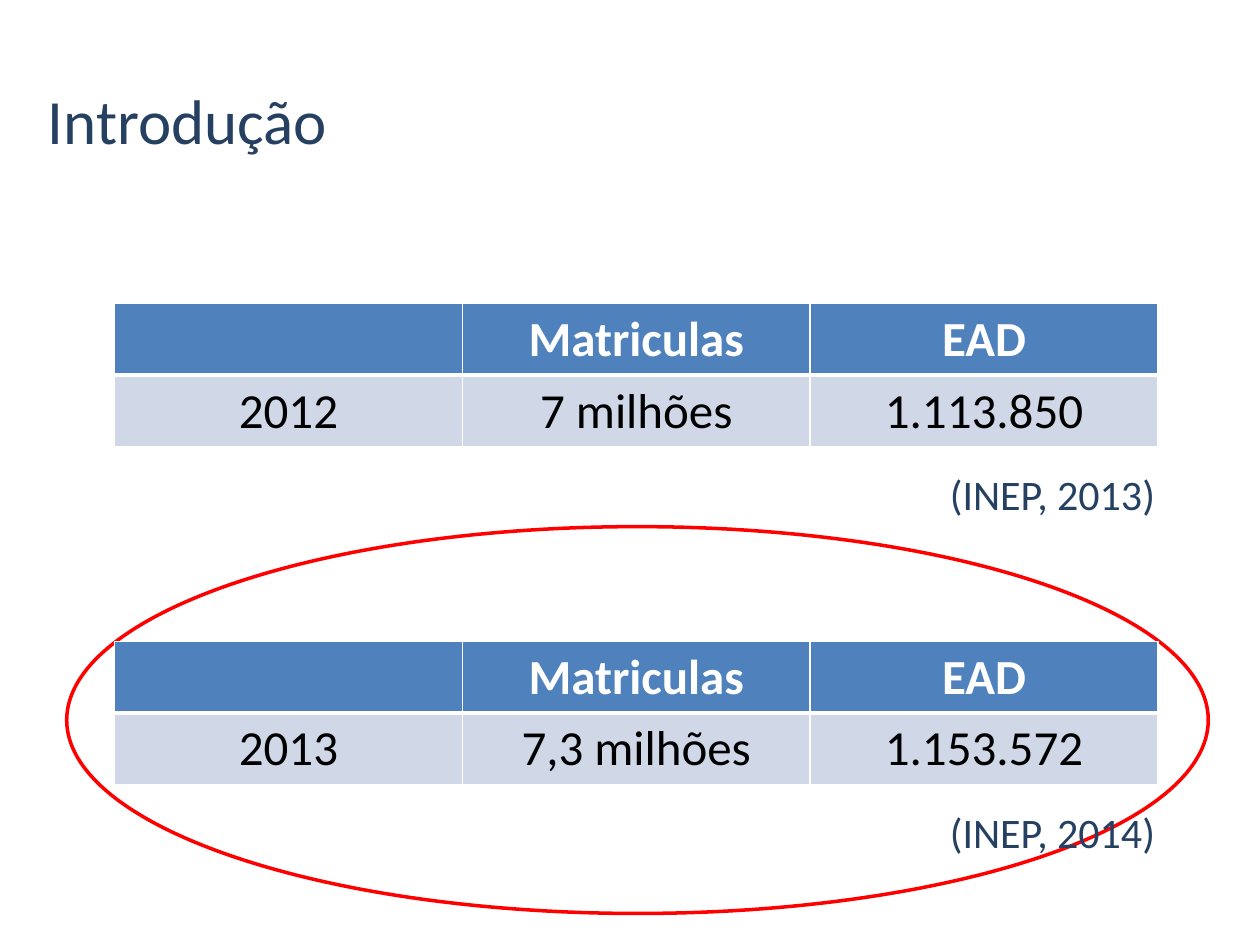
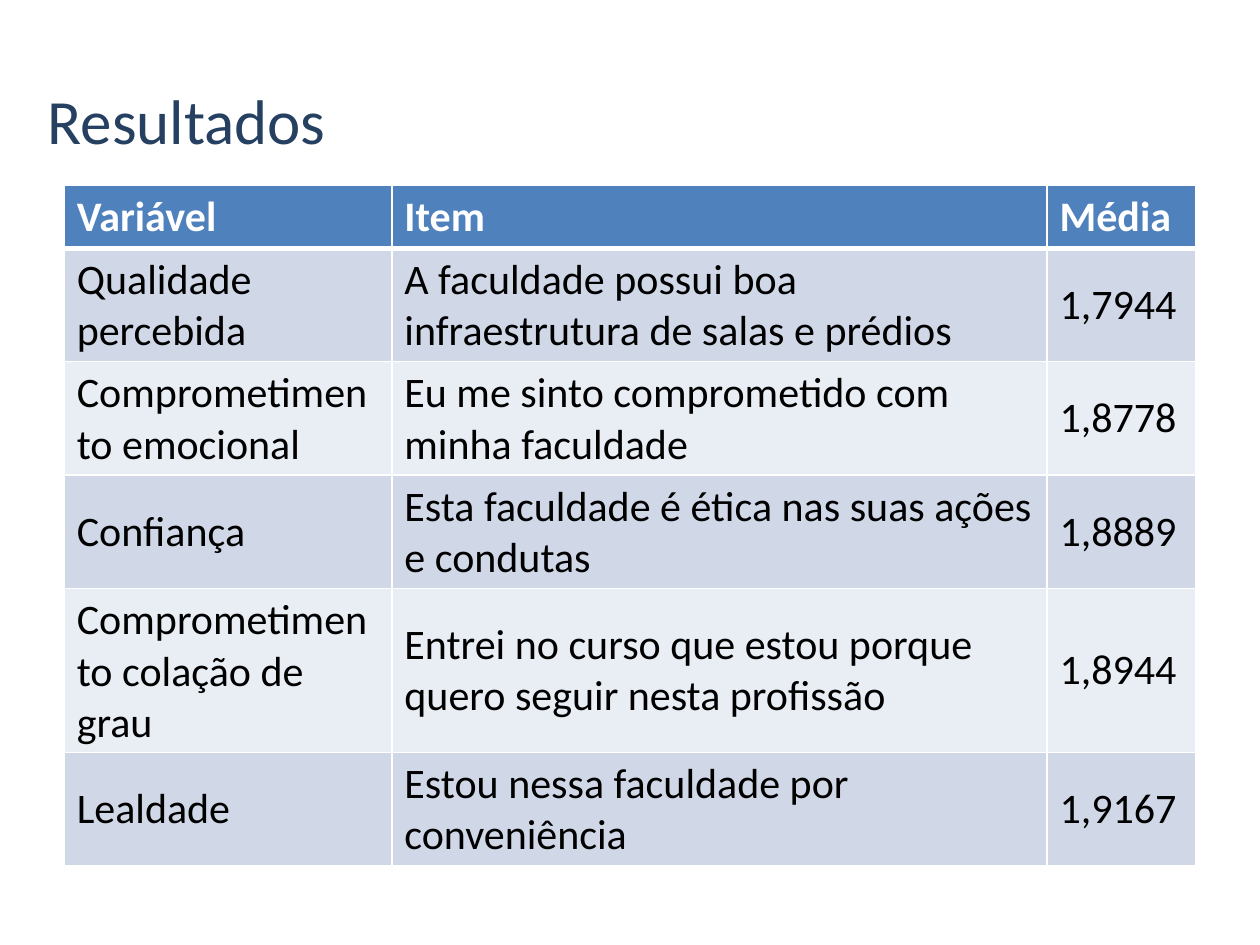
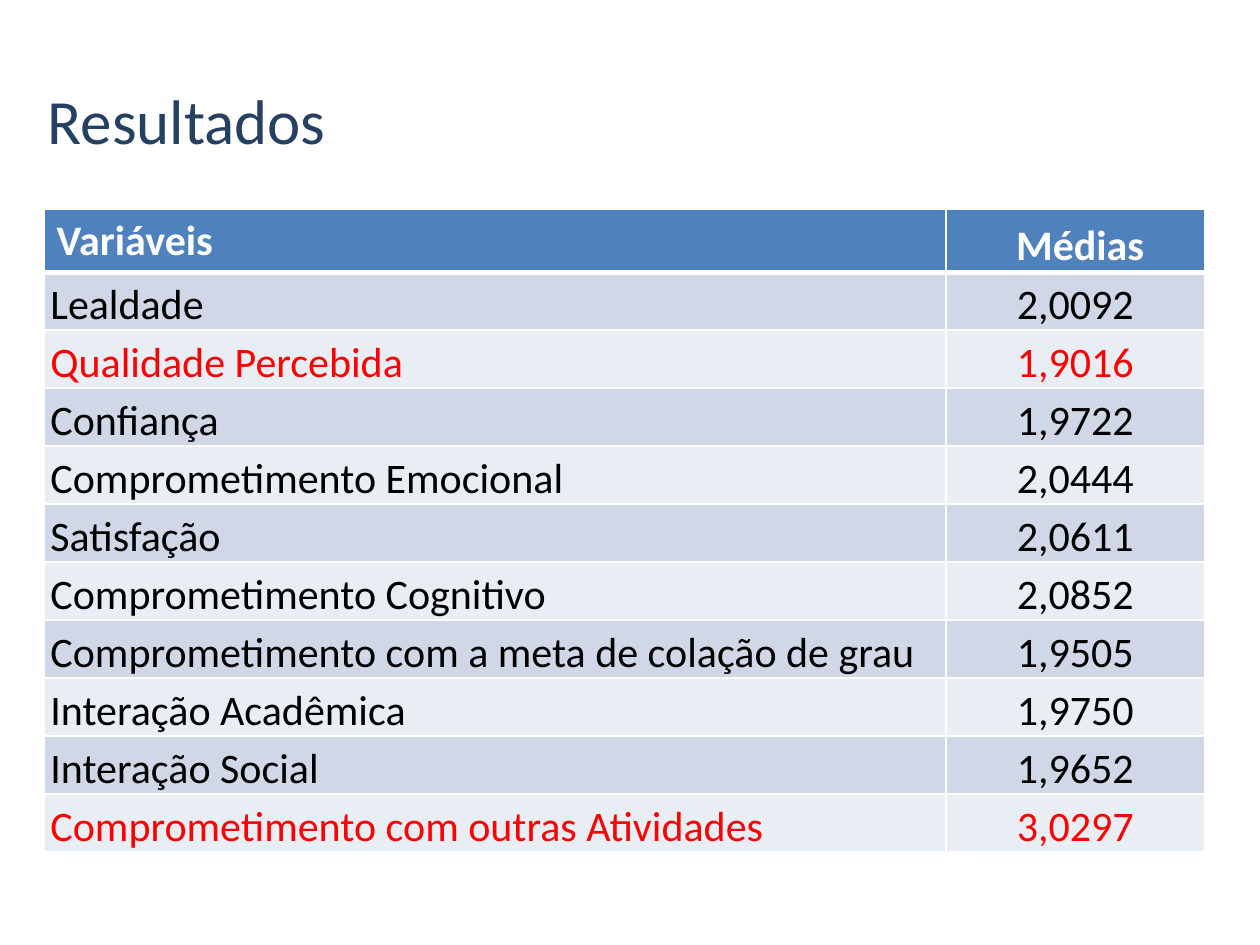
from dataclasses import dataclass, field
from typing import Any

from lxml import etree
from pptx import Presentation
from pptx.dml.color import RGBColor
from pptx.enum.shapes import MSO_SHAPE
from pptx.enum.text import MSO_ANCHOR, MSO_AUTO_SIZE, PP_ALIGN
from pptx.oxml.ns import qn
from pptx.util import Emu, Pt

LEFT, MID = PP_ALIGN.LEFT, PP_ALIGN.CENTER
CENTER, BOTTOM = MSO_ANCHOR.MIDDLE, MSO_ANCHOR.BOTTOM
FIT = MSO_AUTO_SIZE.SHAPE_TO_FIT_TEXT
OVAL = MSO_SHAPE.OVAL

FONT = "Calibri"
NAVY, BLUE, WHITE, BLACK, RED = "254061", "4F81BD", "FFFFFF", "000000", "FF0000"
BANDS = ("D0D8E8", "E9EDF4")
SCALE = 9144


def px(size: int) -> Emu:
    return Emu(size * SCALE)


def color(code: str) -> RGBColor:
    return RGBColor.from_string(code)


def apply(target: Any, values: dict[str, Any]) -> None:
    for name, value in values.items():
        setattr(target, name, value)


@dataclass(frozen=True)
class Look:
    cell: dict[str, Any] = field(default_factory=dict)
    line: dict[str, Any] = field(default_factory=dict)


PLAIN = Look()
MIDDLE = Look({"vertical_anchor": CENTER})
TIGHT = Look(
    {
        "vertical_anchor": BOTTOM,
        "margin_left": px(5),
        "margin_right": px(5),
        "margin_top": 0,
        "margin_bottom": 0,
    },
    {"line_spacing": 1.15},
)


@dataclass(frozen=True)
class Label:
    text: str
    left: int
    top: int
    width: int
    height: int
    size: int


@dataclass(frozen=True)
class Grid:
    left: int
    top: int
    cols: tuple[int, ...]
    rows: tuple[int, ...]
    cells: tuple[tuple[str, ...], ...]
    size: int
    aligns: tuple[Any, ...]
    heads: tuple[Look, ...]
    body: Look
    hot: tuple[int, ...] = ()


def write(frame: Any, text: str, size: int, code: str, bold: bool = False) -> Any:
    line = frame.paragraphs[0]
    if text:
        run = line.add_run()
        run.text = text
        apply(run.font, {"name": FONT, "size": Pt(size), "bold": bold})
        run.font.color.rgb = color(code)
    return line


def draw_label(slide: Any, label: Label) -> None:
    box = slide.shapes.add_textbox(
        px(label.left), px(label.top), px(label.width), px(label.height)
    )
    apply(box.text_frame, {"word_wrap": True, "auto_size": FIT})
    write(box.text_frame, label.text, label.size, NAVY)


def draw_edges(cell: Any, row: int) -> None:
    props = cell._tc.get_or_add_tcPr()
    widths = {"L": 1, "R": 1, "T": 3 if row == 1 else 1, "B": 3 if row == 0 else 1}
    for side, width in widths.items():
        edge = etree.SubElement(props, qn(f"a:ln{side}"), w=str(Pt(width)))
        fill = etree.SubElement(edge, qn("a:solidFill"))
        etree.SubElement(fill, qn("a:srgbClr"), val=WHITE)


def draw_grid(slide: Any, grid: Grid) -> None:
    table = slide.shapes.add_table(
        len(grid.rows), len(grid.cols), px(grid.left), px(grid.top),
        px(sum(grid.cols)), px(sum(grid.rows)),
    ).table
    for col, width in zip(table.columns, grid.cols):
        col.width = px(width)
    for row, height in zip(table.rows, grid.rows):
        row.height = px(height)
    for r, texts in enumerate(grid.cells):
        head = r == 0
        ink = WHITE if head else RED if r in grid.hot else BLACK
        for c, text in enumerate(texts):
            cell = table.cell(r, c)
            look = grid.heads[c] if head else grid.body
            apply(cell, look.cell)
            draw_edges(cell, r)
            cell.fill.solid()
            cell.fill.fore_color.rgb = color(BLUE if head else BANDS[(r - 1) % 2])
            line = write(cell.text_frame, text, grid.size, ink, head)
            apply(line, {"alignment": grid.aligns[c], **look.line})


def draw_ring(slide: Any) -> None:
    ring = slide.shapes.add_shape(OVAL, px(53), px(418), px(906), px(307))
    ring.shadow.inherit = False
    ring.fill.background()
    ring.line.color.rgb = color(RED)
    ring.line.width = Pt(2)


def add_page(deck: Any, title: str, width: int = 921) -> Any:
    slide = deck.slides.add_slide(deck.slide_layouts[6])
    draw_label(slide, Label(title, 28, 60, width, 71, 36))
    return slide


YEARS = (
    (241, ("2012", "7 milhões", "1.113.850"), "(INEP, 2013)"),
    (509, ("2013", "7,3 milhões", "1.153.572"), "(INEP, 2014)"),
)

ITEMS = Grid(
    51, 147, (260, 520, 118), (49, 90, 90, 90, 130, 90),
    (
        ("Variável", "Item", "Média"),
        ("Qualidade percebida",
         "A faculdade possui boa infraestrutura de salas e prédios", "1,7944"),
        ("Comprometimento emocional",
         "Eu me sinto comprometido com minha faculdade", "1,8778"),
        ("Confiança", "Esta faculdade é ética nas suas ações e condutas", "1,8889"),
        ("Comprometimento colação de grau",
         "Entrei no curso que estou porque quero seguir nesta profissão", "1,8944"),
        ("Lealdade", "Estou nessa faculdade por conveniência", "1,9167"),
    ),
    24, (LEFT,) * 3, (PLAIN,) * 3, MIDDLE,
)

MEANS = Grid(
    35, 166, (716, 205), (49,) + (46,) * 10,
    (
        ("Variáveis", " Médias"),
        ("Lealdade", "2,0092"),
        ("Qualidade Percebida", "1,9016"),
        ("Confiança", "1,9722"),
        ("Comprometimento Emocional", "2,0444"),
        ("Satisfação", "2,0611"),
        ("Comprometimento Cognitivo", "2,0852"),
        ("Comprometimento com a meta de colação de grau", "1,9505"),
        ("Interação Acadêmica", "1,9750"),
        ("Interação Social", "1,9652"),
        ("Comprometimento com outras Atividades", "3,0297"),
    ),
    24, (LEFT, MID), (PLAIN, TIGHT), TIGHT, hot=(2, 10),
)


def main() -> None:
    deck = Presentation()
    apply(deck, {"slide_width": px(1000), "slide_height": px(750)})

    intro = add_page(deck, "Introdução", 488)
    draw_ring(intro)
    for top, values, source in YEARS:
        cells = (("", "Matriculas", "EAD"), values)
        draw_grid(intro, Grid(91, top, (276,) * 3, (56,) * 2, cells,
                              28, (MID,) * 3, (PLAIN,) * 3, PLAIN))
        draw_label(intro, Label(source, 744, top + 126, 228, 50, 24))

    for grid in (ITEMS, MEANS):
        draw_grid(add_page(deck, "Resultados"), grid)

    deck.save("out.pptx")


if __name__ == "__main__":
    main()
